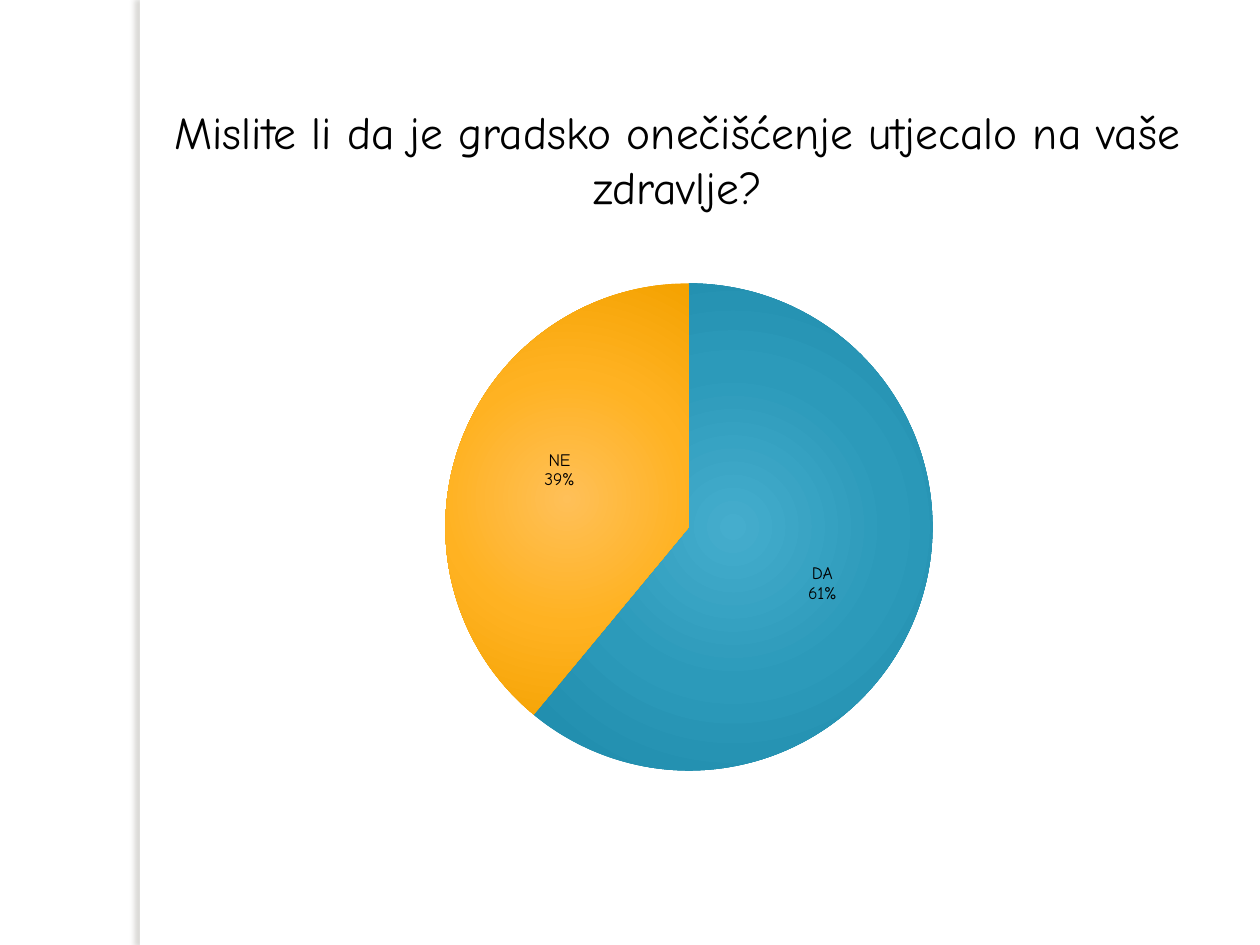
from lxml import etree
from pptx import Presentation
from pptx import util as u
from pptx.chart.data import CategoryChartData
from pptx.dml.color import RGBColor
from pptx.enum import chart as charts, shapes, text
from pptx.oxml import parse_xml
from pptx.oxml.ns import nsdecls, qn

SCALE = 914400 / 126
FONT = "Comic Neue"
BLACK = "000000"
# Name, share, gradient from centre to rim, label shift as part of the chart
ANSWERS = [
    ("DA", 0.61, ("45ADCD", "2C9ABA", "1E8AAA"), (0.025, 0.03)),
    ("NE", 0.39, ("FFC058", "FFB222", "F4A200"), (-0.02, -0.03)),
]


def px(length):
    return u.Emu(round(length * SCALE))


def area(*lengths):
    return [px(length) for length in lengths]


def color(code):
    return RGBColor.from_string(code)


def style_font(font, size, code=BLACK):
    font.name = FONT
    font.size = u.Pt(size)
    font.color.rgb = color(code)


def add_text(page, words, at, size, align=text.PP_ALIGN.CENTER):
    box = page.shapes.add_textbox(*area(*at))
    box.text_frame.word_wrap = True
    para = box.text_frame.paragraphs[0]
    para.alignment = align
    span = para.add_run()
    span.text = words
    style_font(span.font, size)


def add_side_strip(page, at):
    strip = page.shapes.add_shape(shapes.MSO_SHAPE.RECTANGLE, *area(*at))
    strip.fill.solid()
    strip.fill.fore_color.rgb = color("FFFFFF")
    strip.line.fill.background()
    strip.shadow.inherit = False
    # Soft shadow to the left
    effects = strip.element.spPr.find(qn("a:effectLst"))
    effects.append(parse_xml(
        f'<a:outerShdw {nsdecls("a")} blurRad="{u.Pt(3)}" dist="{u.Pt(3)}" '
        'dir="10800000" algn="tl" rotWithShape="0"><a:srgbClr val="736F63">'
        '<a:alpha val="25000"/></a:srgbClr></a:outerShdw>'))


def fill_radial(point, stops):
    point.format.line.fill.background()
    step = 100000 // (len(stops) - 1)
    colors = "".join(f'<a:gs pos="{i * step}"><a:srgbClr val="{code}"/></a:gs>'
                     for i, code in enumerate(stops))
    gradient = parse_xml(
        f'<a:gradFill {nsdecls("a")}><a:gsLst>{colors}</a:gsLst>'
        '<a:path path="circle"><a:fillToRect l="50000" t="50000" r="50000" '
        'b="50000"/></a:path></a:gradFill>')
    point._element.find(f".//{qn('c:dPt')}[last()]/{qn('c:spPr')}").insert(0, gradient)


def label_point(point, index, shift):
    label = point.data_label
    style_font(label.font, 10)
    label.position = charts.XL_LABEL_POSITION.CENTER
    element = point._element.findall(f".//{qn('c:dLbl')}")[index]
    element.find(qn("c:showCatName")).set("val", "1")
    element.find(qn("c:showVal")).set("val", "1")
    element.find(qn("c:showPercent")).set("val", "0")
    separator = etree.SubElement(element, qn("c:separator"))
    separator.text = "\n"
    for old in element.findall(qn("c:layout")):
        element.remove(old)
    element.insert(1, parse_xml(
        f'<c:layout {nsdecls("c")}><c:manualLayout><c:x val="{shift[0]}"/>'
        f'<c:y val="{shift[1]}"/></c:manualLayout></c:layout>'))
    element.insert(2, parse_xml(
        f'<c:numFmt {nsdecls("c")} formatCode="0%" sourceLinked="0"/>'))


def add_pie(page, answers, at):
    data = CategoryChartData(number_format="0%")
    data.categories = [answer[0] for answer in answers]
    data.add_series("Series 1", [answer[1] for answer in answers])
    pie = page.shapes.add_chart(charts.XL_CHART_TYPE.PIE, *area(*at), data).chart
    pie.has_title = False
    pie.has_legend = False
    style_font(pie.font, 10)
    plot = pie.plots[0]
    plot.vary_by_categories = True
    for index, (_, _, stops, shift) in enumerate(answers):
        point = plot.series[0].points[index]
        fill_radial(point, stops)
        label_point(point, index, shift)


def main():
    deck = Presentation()
    deck.slide_width, deck.slide_height = area(1260, 945)
    page = deck.slides.add_slide(deck.slide_layouts[6])

    # Edge of the side panel
    add_side_strip(page, (140, 0, 10, 945))
    # Survey answers
    add_pie(page, ANSWERS, (315, 266, 748, 522))
    # Survey question
    add_text(page, "Mislite li da je gradsko onečišćenje utjecalo na vaše zdravlje?",
             (137, 98, 1082, 123), size=26)

    deck.save("out.pptx")


if __name__ == "__main__":
    main()
